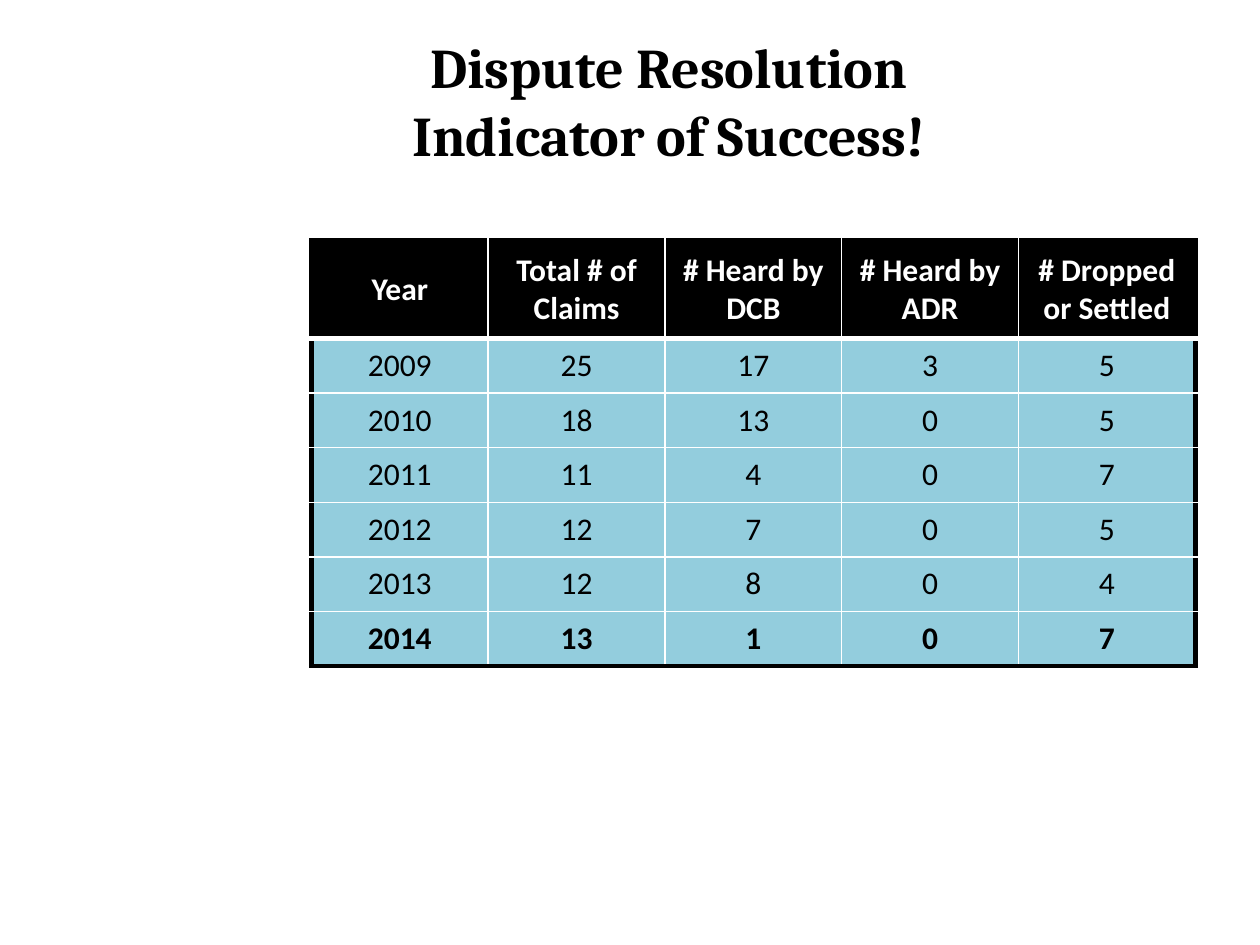
from lxml.etree import SubElement
from pptx import Presentation
from pptx.dml.color import RGBColor as RGB
from pptx.enum.text import MSO_ANCHOR as ANCHOR, MSO_AUTO_SIZE as FIT, PP_ALIGN as ALIGN
from pptx.oxml.ns import qn
from pptx.util import Pt

BLACK = RGB(0x00, 0x00, 0x00)
WHITE = RGB(0xFF, 0xFF, 0xFF)
AQUA = RGB(0x93, 0xCD, 0xDD)

THIN, THICK = 1, 3
HEADER_H = 56
TITLE = "Dispute Resolution\vIndicator of Success!"
CLAIMS = [
    ["Year", "Total # of Claims", "# Heard by DCB", "# Heard by ADR", "# Dropped or Settled"],
    ["2009", "25", "17", "3", "5"],
    ["2010", "18", "13", "0", "5"],
    ["2011", "11", "4", "0", "7"],
    ["2012", "12", "7", "0", "5"],
    ["2013", "12", "8", "0", "4"],
    ["2014", "13", "1", "0", "7"],
]


def set_attrs(obj, values):
    for name, value in values.items():
        setattr(obj, name, value)


def format_text(tf, name, size, color, bold):
    for p in tf.paragraphs:
        p.alignment = ALIGN.CENTER
        for r in p.runs:
            set_attrs(r.font, {"name": name, "size": Pt(size), "bold": bold})
            r.font.color.rgb = color


def add_border(cell, side, color, width):
    ln = SubElement(cell._tc.get_or_add_tcPr(), qn(f"a:ln{side}"), w=str(Pt(width)))
    fill = SubElement(ln, qn("a:solidFill"))
    SubElement(fill, qn("a:srgbClr"), val=str(color))


def add_title(s, left, top, width, height):
    sp = s.shapes.title
    set_attrs(sp, {"left": Pt(left), "top": Pt(top), "width": Pt(width), "height": Pt(height)})
    tf = sp.text_frame
    tf.text = TITLE
    set_attrs(tf, {"word_wrap": True, "auto_size": FIT.NONE, "vertical_anchor": ANCHOR.MIDDLE})
    format_text(tf, "Cambria", 32, BLACK, True)


def format_cell(cell, row, col, last_row, last_col):
    header = row == 0
    outer = {"L": col == 0, "R": col == last_col, "T": header, "B": row == last_row}
    under_header = {"T": row == 1, "B": header}
    for side, is_outer in outer.items():
        thick = is_outer or under_header.get(side, False)
        add_border(cell, side, BLACK if is_outer else WHITE, THICK if thick else THIN)
    cell.fill.solid()
    cell.fill.fore_color.rgb = BLACK if header else AQUA
    set_attrs(cell, {
        "vertical_anchor": ANCHOR.MIDDLE,
        "margin_left": Pt(5), "margin_right": Pt(5),
        "margin_top": Pt(3), "margin_bottom": Pt(3),
    })
    format_text(cell.text_frame, "Calibri", 18, WHITE if header else BLACK,
                header or row == last_row)


def add_claims_table(s, left, top, width, height):
    n_rows, n_cols = len(CLAIMS), len(CLAIMS[0])
    table = s.shapes.add_table(n_rows, n_cols, Pt(left), Pt(top), Pt(width), Pt(height)).table
    for column in table.columns:
        column.width = Pt(width / n_cols)
    for i, values in enumerate(CLAIMS):
        table.rows[i].height = Pt(HEADER_H if i == 0 else (height - HEADER_H) / (n_rows - 1))
        for j, value in enumerate(values):
            cell = table.cell(i, j)
            cell.text = value
            format_cell(cell, i, j, n_rows - 1, n_cols - 1)


def main():
    prs = Presentation()
    set_attrs(prs, {"slide_width": Pt(720), "slide_height": Pt(540)})
    s = prs.slides.add_slide(prs.slide_layouts[5])
    add_title(s, 65.5, 18, 633.5, 78.5)
    add_claims_table(s, 178, 137.5, 505, 243.2)
    prs.save("out.pptx")


if __name__ == "__main__":
    main()
